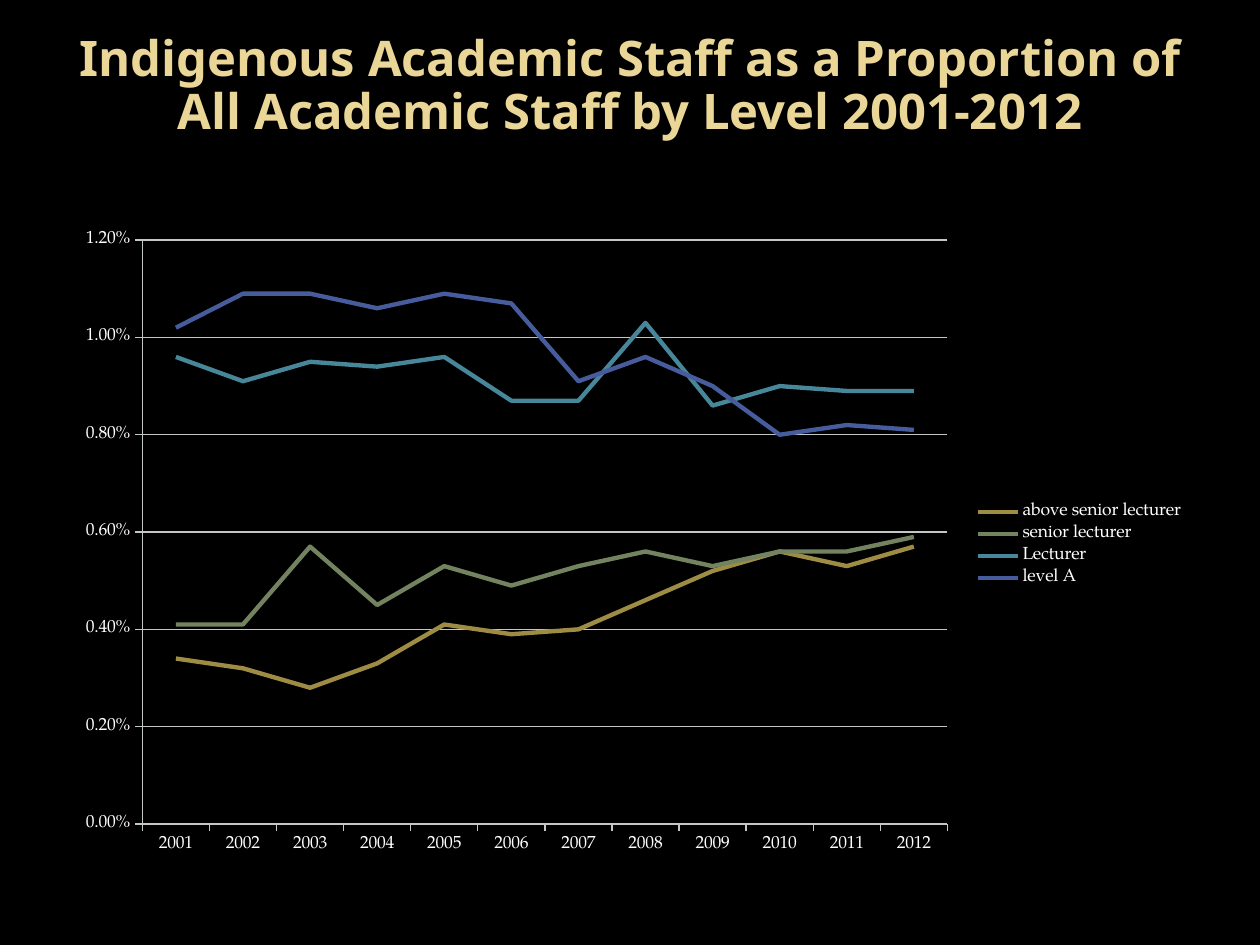
"""Build a slide with a line chart of Indigenous academic staff by level."""
from dataclasses import dataclass

import pptx
import pptx.chart.data
import pptx.dml.color
import pptx.enum.chart
import pptx.enum.text
import pptx.oxml
import pptx.util
from pptx.util import Cm


@dataclass(frozen=True)
class Theme:
    back: str = "000000"
    gold: str = "EAD696"
    text: str = "FFFFFF"
    rule: str = "C4C8C4"
    head: str = "Noto Sans"
    body: str = "TeX Gyre Pagella"
    big: int = 28
    small: int = 10
    thin: float = 0.75
    thick: float = 2.5


def tint(code):
    return pptx.dml.color.RGBColor.from_string(code)


theme = Theme()
deck = pptx.Presentation()
deck.slide_width, deck.slide_height = Cm(25.4), Cm(19.05)
slide = deck.slides.add_slide(deck.slide_layouts[6])
slide.background.fill.solid()
slide.background.fill.fore_color.rgb = tint(theme.back)

title = slide.shapes.add_textbox(Cm(1.27), Cm(0.76), Cm(22.86), Cm(3.18))
frame = title.text_frame
frame.word_wrap = True
frame.auto_size = pptx.enum.text.MSO_AUTO_SIZE.NONE
frame.vertical_anchor = pptx.enum.text.MSO_ANCHOR.MIDDLE
frame.margin_bottom = Cm(1.32)
para = frame.paragraphs[0]
para.text = "Indigenous Academic Staff as a Proportion of All Academic Staff by Level 2001-2012"
para.alignment = pptx.enum.text.PP_ALIGN.CENTER
para.line_spacing = 0.9
para.font.name = theme.head
para.font.size = pptx.util.Pt(theme.big)
para.font.bold = True
para.font.color.rgb = tint(theme.gold)

levels = [
    ("above senior lecturer", "9E8C44",
     [0.34, 0.32, 0.28, 0.33, 0.41, 0.39, 0.40, 0.46, 0.52, 0.56, 0.53, 0.57]),
    ("senior lecturer", "74835F",
     [0.41, 0.41, 0.57, 0.45, 0.53, 0.49, 0.53, 0.56, 0.53, 0.56, 0.56, 0.59]),
    ("Lecturer", "478799",
     [0.96, 0.91, 0.95, 0.94, 0.96, 0.87, 0.87, 1.03, 0.86, 0.90, 0.89, 0.89]),
    ("level A", "465C9C",
     [1.02, 1.09, 1.09, 1.06, 1.09, 1.07, 0.91, 0.96, 0.90, 0.80, 0.82, 0.81]),
]
data = pptx.chart.data.CategoryChartData(number_format="0.00%")
data.categories = [str(year) for year in range(2001, 2013)]
for name, _, rates in levels:
    data.add_series(name, [round(rate / 100, 4) for rate in rates])

chart = slide.shapes.add_chart(
    pptx.enum.chart.XL_CHART_TYPE.LINE,
    Cm(1.27), Cm(4.45), Cm(22.86), Cm(13.08), data).chart
chart.has_title = False
chart.font.name = theme.body
chart.font.size = pptx.util.Pt(theme.small)
chart.font.color.rgb = tint(theme.text)
chart.has_legend = True
chart.legend.position = pptx.enum.chart.XL_LEGEND_POSITION.RIGHT
chart.legend.include_in_layout = False

plot = chart.plots[0]
plot.vary_by_categories = False
for line, (_, color, _) in zip(plot.series, levels):
    line.smooth = False
    line.marker.style = pptx.enum.chart.XL_MARKER_STYLE.NONE
    line.format.line.color.rgb = tint(color)
    line.format.line.width = pptx.util.Pt(theme.thick)

years, scale = chart.category_axis, chart.value_axis
scale.minimum_scale, scale.maximum_scale, scale.major_unit = 0, 0.012, 0.002
scale.has_major_gridlines = True
scale.tick_labels.number_format = "0.00%"
scale.tick_labels.number_format_is_linked = False
for axis in (years, scale):
    axis.major_tick_mark = pptx.enum.chart.XL_TICK_MARK.OUTSIDE
for part in (years, scale, scale.major_gridlines):
    part.format.line.color.rgb = tint(theme.rule)
    part.format.line.width = pptx.util.Pt(theme.thin)

area = chart._chartSpace.chart.plotArea
for old in area.findall(pptx.oxml.ns.qn("c:layout")):
    area.remove(old)
area.insert(0, pptx.oxml.parse_xml(
    f'<c:layout {pptx.oxml.ns.nsdecls("c")}><c:manualLayout>'
    '<c:layoutTarget val="inner"/><c:xMode val="edge"/><c:yMode val="edge"/>'
    '<c:x val="0.07"/><c:y val="0.03"/><c:w val="0.71"/><c:h val="0.9"/>'
    '</c:manualLayout></c:layout>'))

deck.save("out.pptx")
